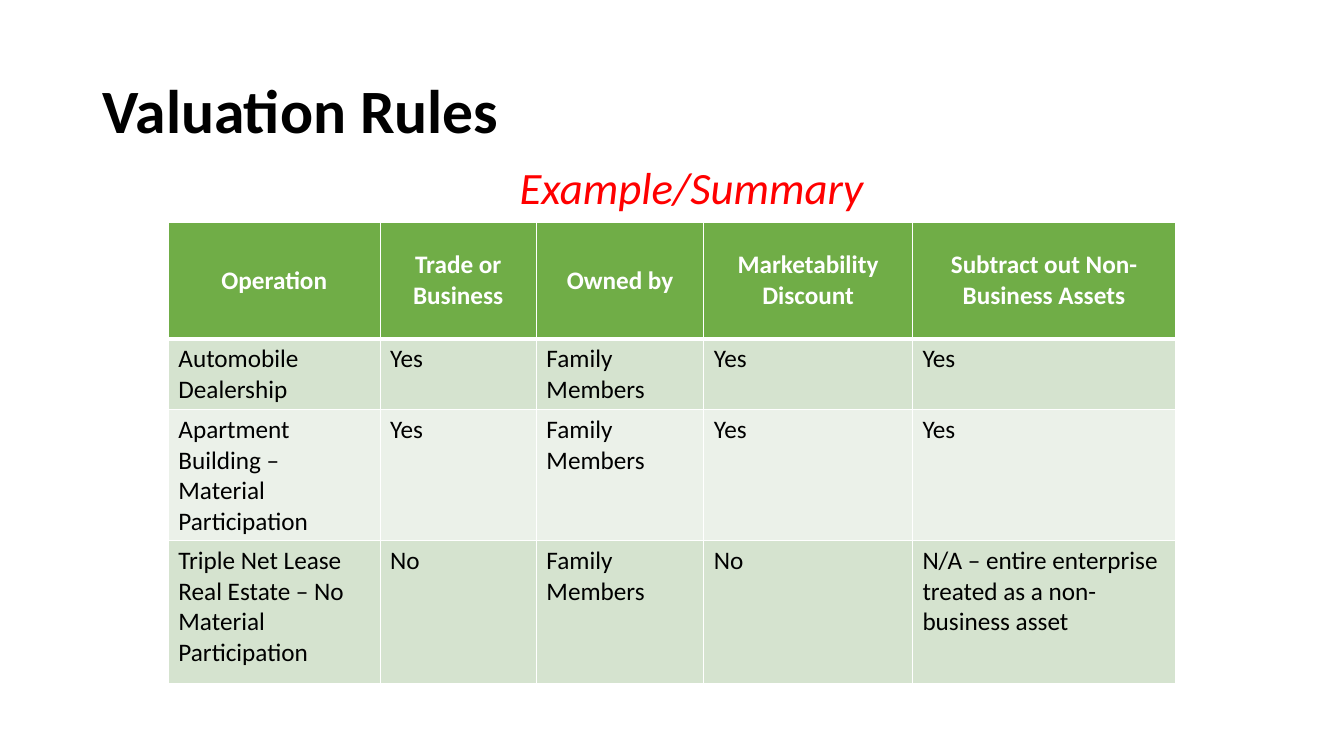
from lxml import etree
from pptx import Presentation
from pptx.dml.color import RGBColor
from pptx.enum.text import MSO_ANCHOR, PP_ALIGN
from pptx.oxml.ns import qn
from pptx.util import Pt

EMU_PER_PX = 9144
FONT = "Calibri"
BLACK = RGBColor(0x00, 0x00, 0x00)
WHITE = RGBColor(0xFF, 0xFF, 0xFF)
RED = RGBColor(0xFF, 0x00, 0x00)
GREEN = RGBColor(0x70, 0xAD, 0x47)
BAND_DARK = RGBColor(0xD5, 0xE3, 0xCF)
BAND_LIGHT = RGBColor(0xEB, 0xF1, 0xE9)
LEFT, CENTER = PP_ALIGN.LEFT, PP_ALIGN.CENTER
TOP, MIDDLE = MSO_ANCHOR.TOP, MSO_ANCHOR.MIDDLE

COLUMN_WIDTHS = [210, 155, 166, 207, 261]
ROW_HEIGHTS = [115, 62, 115, 142]
VALUATION_ROWS = [
    ["Operation", "Trade or Business", "Owned by", "Marketability\nDiscount",
     "Subtract out Non-Business Assets"],
    ["Automobile Dealership", "Yes", "Family Members", "Yes", "Yes"],
    ["Apartment Building – Material Participation", "Yes", "Family Members", "Yes", "Yes"],
    ["Triple Net Lease Real Estate – No Material Participation", "No", "Family Members", "No",
     "N/A – entire enterprise treated as a non-business asset"],
]


def px(length):
    return length * EMU_PER_PX


class SlideBuilder:
    def __init__(self, slide):
        self.slide = slide

    def fill_text(self, frame, text, size, color, align=LEFT, bold=False, italic=False, spacing=1.0):
        frame.text = text
        for paragraph in frame.paragraphs:
            paragraph.alignment = align
            paragraph.line_spacing = spacing
            for run in paragraph.runs:
                run.font.name = FONT
                run.font.size = Pt(size)
                run.font.color.rgb = color
                run.font.bold = bold
                run.font.italic = italic

    def text(self, box, text, size, color, **style):
        frame = self.slide.shapes.add_textbox(*map(px, box)).text_frame
        frame.word_wrap = True
        frame.vertical_anchor = MIDDLE
        self.fill_text(frame, text, size, color, **style)

    def border(self, cell, widths):
        properties = cell._tc.get_or_add_tcPr()
        for position, (side, width) in enumerate(widths.items()):
            line = etree.Element(qn(f"a:ln{side}"), w=str(Pt(width)))
            solid = etree.SubElement(line, qn("a:solidFill"))
            etree.SubElement(solid, qn("a:srgbClr"), val=str(WHITE))
            properties.insert(position, line)

    def table(self, box, rows, column_widths, row_heights):
        table = self.slide.shapes.add_table(len(rows), len(column_widths), *map(px, box)).table
        for column, width in zip(table.columns, column_widths):
            column.width = px(width)
        for index, (row, height, entries) in enumerate(zip(table.rows, row_heights, rows)):
            row.height = px(height)
            header = index == 0
            band = BAND_DARK if index % 2 else BAND_LIGHT
            edges = {"L": 1, "R": 1, "T": 3 if index == 1 else 1, "B": 3 if header else 1}
            for cell, entry in zip(row.cells, entries):
                self.fill_text(cell.text_frame, entry, 18, WHITE if header else BLACK,
                               align=CENTER if header else LEFT, bold=header)
                cell.vertical_anchor = MIDDLE if header else TOP
                cell.fill.solid()
                cell.fill.fore_color.rgb = GREEN if header else band
                self.border(cell, edges)


def main():
    deck = Presentation()
    deck.slide_width, deck.slide_height = px(1333), px(750)
    builder = SlideBuilder(deck.slides.add_slide(deck.slide_layouts[6]))
    builder.text((92, 40, 1150, 145), "Valuation Rules", 44, BLACK, bold=True, spacing=0.9)
    builder.text((236, 152, 900, 67), "Example/Summary", 32, RED, align=CENTER, italic=True)
    builder.table((167, 221, 999, 457), VALUATION_ROWS, COLUMN_WIDTHS, ROW_HEIGHTS)
    deck.save("out.pptx")


if __name__ == "__main__":
    main()
